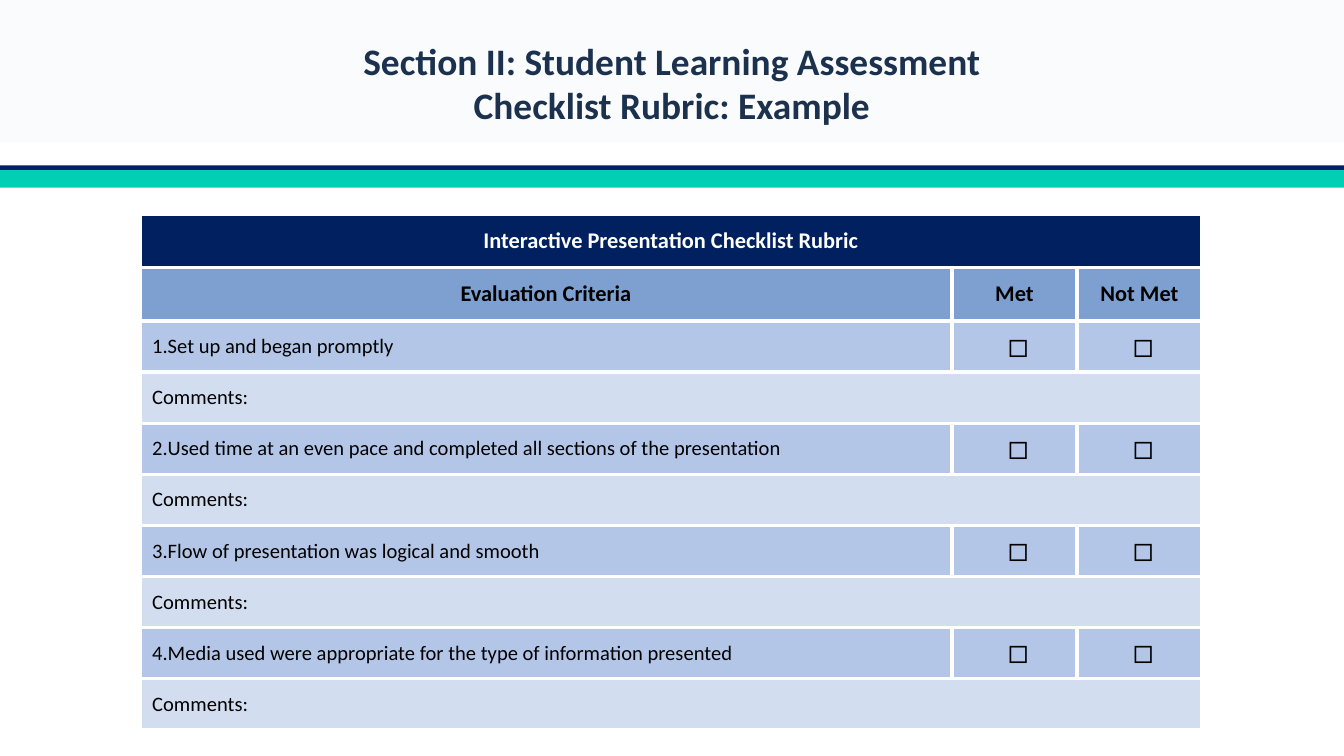
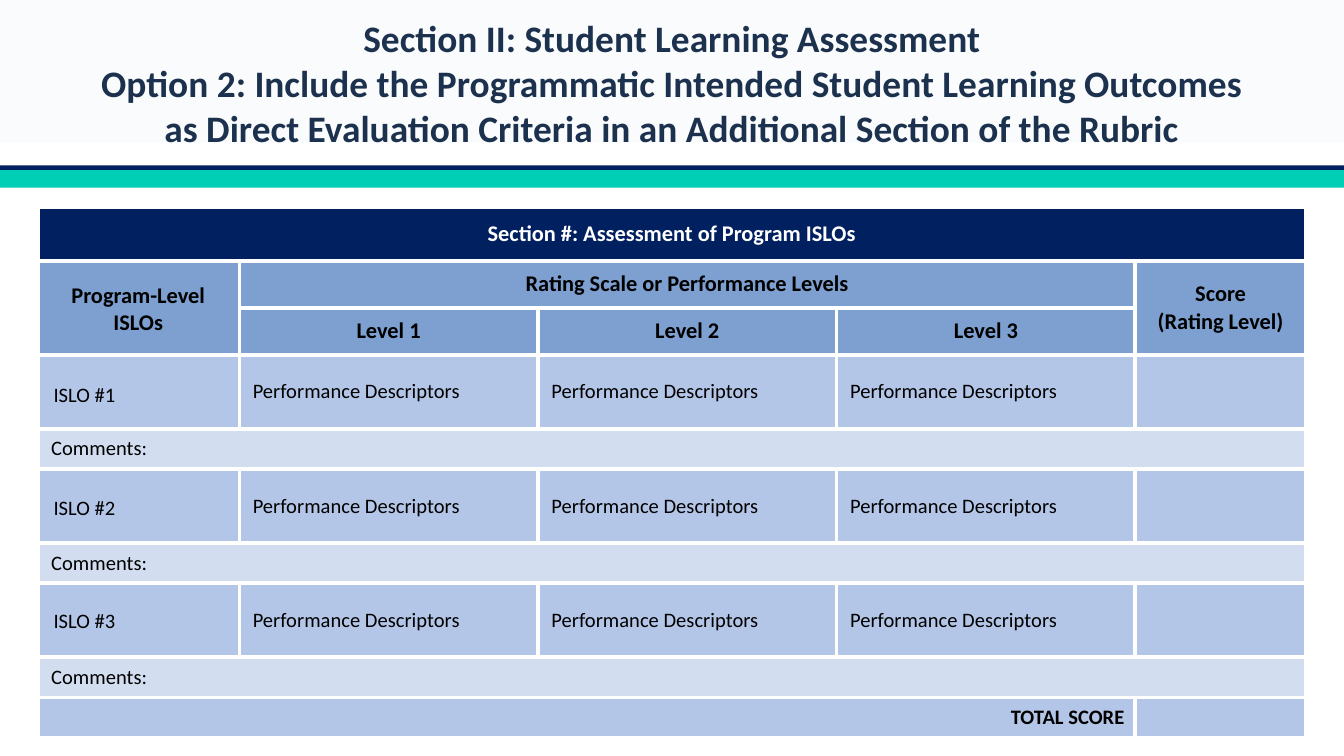
from collections import namedtuple

from lxml import etree
from pptx import Presentation
from pptx.dml.color import RGBColor
from pptx.enum.shapes import MSO_SHAPE
from pptx.enum.text import MSO_ANCHOR, PP_ALIGN
from pptx.oxml.ns import qn
from pptx.util import Pt

RECTANGLE = MSO_SHAPE.RECTANGLE
MIDDLE = MSO_ANCHOR.MIDDLE
LEFT, CENTER, RIGHT = PP_ALIGN.LEFT, PP_ALIGN.CENTER, PP_ALIGN.RIGHT

COLORS = {
    "white": "FFFFFF",
    "black": "000000",
    "navy": "002060",
    "teal": "00CFB5",
    "mist": "E8F0F4",
    "title": "1C314E",
    "header": "7DA0D0",
    "criterion": "B4C6E7",
    "comment": "D2DEEF",
}
FONT = "Calibri"
BORDER_WIDTH = 2.25
SECTION = "Section II: Student Learning Assessment"
CHECKBOX = " ◻"

Box = namedtuple("Box", "left top width height")
PAGE = Box(0, 0, 720, 405)
TITLE = Box(0, 0, 720, 88.5)
CHECKLIST = Box(75, 114.5, 569, 276.48)
OUTCOMES = Box(20.2, 110.9, 679.5, 284.4)


def color(name):
    return RGBColor.from_string(COLORS[name])


def lengths(box):
    return [Pt(value) for value in box]


def write(frame, text, size=11, ink="black", bold=False, align=LEFT,
          margins=(0, 0, 0, 0), indent=0, hanging=0, number=None):
    frame.word_wrap = True
    frame.margin_left, frame.margin_top, frame.margin_right, frame.margin_bottom = lengths(margins)
    for index, line in enumerate(text.split("\n")):
        para = frame.add_paragraph() if index else frame.paragraphs[0]
        para.alignment = align
        properties = para._p.get_or_add_pPr()
        if indent or hanging:
            properties.set("marL", str(Pt(indent)))
            properties.set("indent", str(-Pt(hanging)))
        if number:
            etree.SubElement(properties, qn("a:buAutoNum"),
                             type="arabicPeriod", startAt=str(number))
        span = para.add_run()
        span.text = line
        span.font.name = FONT
        span.font.size = Pt(size)
        span.font.bold = bold
        span.font.color.rgb = color(ink)


def add_text(page, box, text, **style):
    frame = page.shapes.add_textbox(*lengths(box)).text_frame
    frame.vertical_anchor = MIDDLE
    write(frame, text, **style)


def add_band(page, box, fill, alpha=None):
    band = page.shapes.add_shape(RECTANGLE, *lengths(box))
    band.shadow.inherit = False
    band.line.fill.background()
    band.fill.solid()
    band.fill.fore_color.rgb = color(fill)
    if alpha:
        tint = band.fill._xPr.find(".//" + qn("a:srgbClr"))
        etree.SubElement(tint, qn("a:alpha"), val=str(alpha * 1000))


def add_backdrop(page, box):
    rule_top = box.top + 88.6
    body_top = rule_top + 2.6
    add_band(page, Box(box.left, rule_top, box.width, 16.6), "navy")
    add_band(page, Box(box.left, body_top, box.width, box.top + box.height - body_top), "white")
    add_band(page, Box(box.left, body_top, box.width, 9.4), "teal")
    add_band(page, Box(box.left, box.top, box.width, 76.3), "mist", alpha=25)


def add_title(page, box, text):
    add_text(page, box, text, size=20, ink="title", bold=True, align=CENTER)


def add_border(cell):
    properties = cell._tc.get_or_add_tcPr()
    for side in ("a:lnL", "a:lnR", "a:lnT", "a:lnB"):
        line = etree.SubElement(properties, qn(side), w=str(Pt(BORDER_WIDTH)))
        fill = etree.SubElement(line, qn("a:solidFill"))
        etree.SubElement(fill, qn("a:srgbClr"), val=COLORS["white"])


def add_grid(page, box, widths, heights, fills, merges):
    frame = page.shapes.add_table(len(heights), len(widths), *lengths(box))
    table = frame.table
    table.first_row = table.horz_banding = False
    for column, width in zip(table.columns, widths):
        column.width = Pt(width)
    for row, height, fill in zip(table.rows, heights, fills):
        row.height = Pt(height)
        for cell in row.cells:
            add_border(cell)
            cell.fill.solid()
            cell.fill.fore_color.rgb = color(fill)
            cell.vertical_anchor = MIDDLE
            cell.margin_top = cell.margin_bottom = 0
            cell.text_frame.paragraphs[0]._p.get_or_add_endParaRPr().set("sz", "1100")
    for top, left, bottom, right in merges:
        table.cell(top, left).merge(table.cell(bottom, right))
    return table


def write_cell(table, row, column, text, **style):
    cell = table.cell(row, column)
    margins = style.pop("margins")
    write(cell.text_frame, text, **style)
    cell.text_frame.word_wrap = None
    cell.margin_left, cell.margin_top, cell.margin_right, cell.margin_bottom = lengths(margins)


def add_checklist(page, box):
    criteria = [
        "Set up and began promptly",
        "Used time at an even pace and completed all sections of the presentation",
        "Flow of presentation was logical and smooth",
        "Media used were appropriate for the type of information presented",
    ]
    count = len(criteria)
    margins = (6.5, 0, 6.5, 0)
    heading = dict(size=12, bold=True, align=CENTER, margins=margins)
    comment_rows = range(3, 3 + 2 * count, 2)
    table = add_grid(
        page, box, [435, 67, 67], [28.8] * 2 + [27.36] * 2 * count,
        ["navy", "header"] + ["criterion", "comment"] * count,
        [(row, 0, row, 2) for row in (0, *comment_rows)])
    write_cell(table, 0, 0, "Interactive Presentation Checklist Rubric", ink="white", **heading)
    for column, text in enumerate(["Evaluation Criteria", "Met", "Not Met"]):
        write_cell(table, 1, column, text, **heading)
    for number, (row, text) in enumerate(zip(comment_rows, criteria), 1):
        write_cell(table, row - 1, 0, text, margins=margins,
                   indent=7.2, hanging=10.8, number=number)
        for column in (1, 2):
            write_cell(table, row - 1, column, CHECKBOX, size=18, align=CENTER, margins=margins)
        write_cell(table, row, 0, "Comments:", margins=margins)


def add_outcomes(page, box):
    count = 3
    total_row = 3 + 2 * count
    comment_rows = range(4, total_row, 2)
    heading = dict(size=12, bold=True, align=CENTER, margins=(5, 0, 5, 0))
    wide_margins = (7.2, 0, 5.8, 0)
    table = add_grid(
        page, box, [108, 160, 160, 160, 91.5],
        [28.8, 25.2, 25.2] + [39.6, 21.6] * count + [21.6],
        ["navy", "header", "header"] + ["criterion", "comment"] * count + ["criterion"],
        [(0, 0, 0, 4), (1, 0, 2, 0), (1, 1, 1, 3), (1, 4, 2, 4), (total_row, 0, total_row, 3)]
        + [(row, 0, row, 4) for row in comment_rows])
    write_cell(table, 0, 0, "Section #: Assessment of Program ISLOs", ink="white", **heading)
    write_cell(table, 1, 1, "Rating Scale or Performance Levels", **heading)
    write_cell(table, 1, 4, "Score\n(Rating Level)", **{**heading, "margins": (0, 0, 0, 0)})
    for level in (1, 2, 3):
        write_cell(table, 2, level, f"Level {level}", **heading)
        for row in comment_rows:
            write_cell(table, row - 1, level, "Performance Descriptors",
                       margins=(3.6,) * 4, indent=3.6)
    for row in comment_rows:
        write_cell(table, row, 0, "Comments:", margins=wide_margins)
    write_cell(table, total_row, 0, "TOTAL SCORE", bold=True, align=RIGHT,
               margins=wide_margins, indent=3.6)

    label_margins = (7.2, 3.6, 7.2, 3.6)
    label_left = box.left + 1.4
    add_text(page, Box(label_left, box.top + 30.9, 105, 46.8), "Program-Level\nISLOs",
             size=12, bold=True, align=CENTER, margins=label_margins)
    for index in range(count):
        add_text(page, Box(label_left, box.top + 82.1 + 60.8 * index, 54, 36),
                 f"ISLO #{index + 1}", margins=label_margins)


def add_page(deck, title, add_rubric, rubric_box):
    page = deck.slides.add_slide(deck.slide_layouts[6])
    add_backdrop(page, PAGE)
    add_rubric(page, rubric_box)
    add_title(page, TITLE, f"{SECTION}\n{title}")


def main():
    deck = Presentation()
    deck.slide_width, deck.slide_height = Pt(PAGE.width), Pt(PAGE.height)
    add_page(deck, "Checklist Rubric: Example", add_checklist, CHECKLIST)
    add_page(deck,
             "Option 2: Include the Programmatic Intended Student Learning Outcomes\n"
             "as Direct Evaluation Criteria in an Additional Section of the Rubric",
             add_outcomes, OUTCOMES)
    deck.save("out.pptx")


if __name__ == "__main__":
    main()
